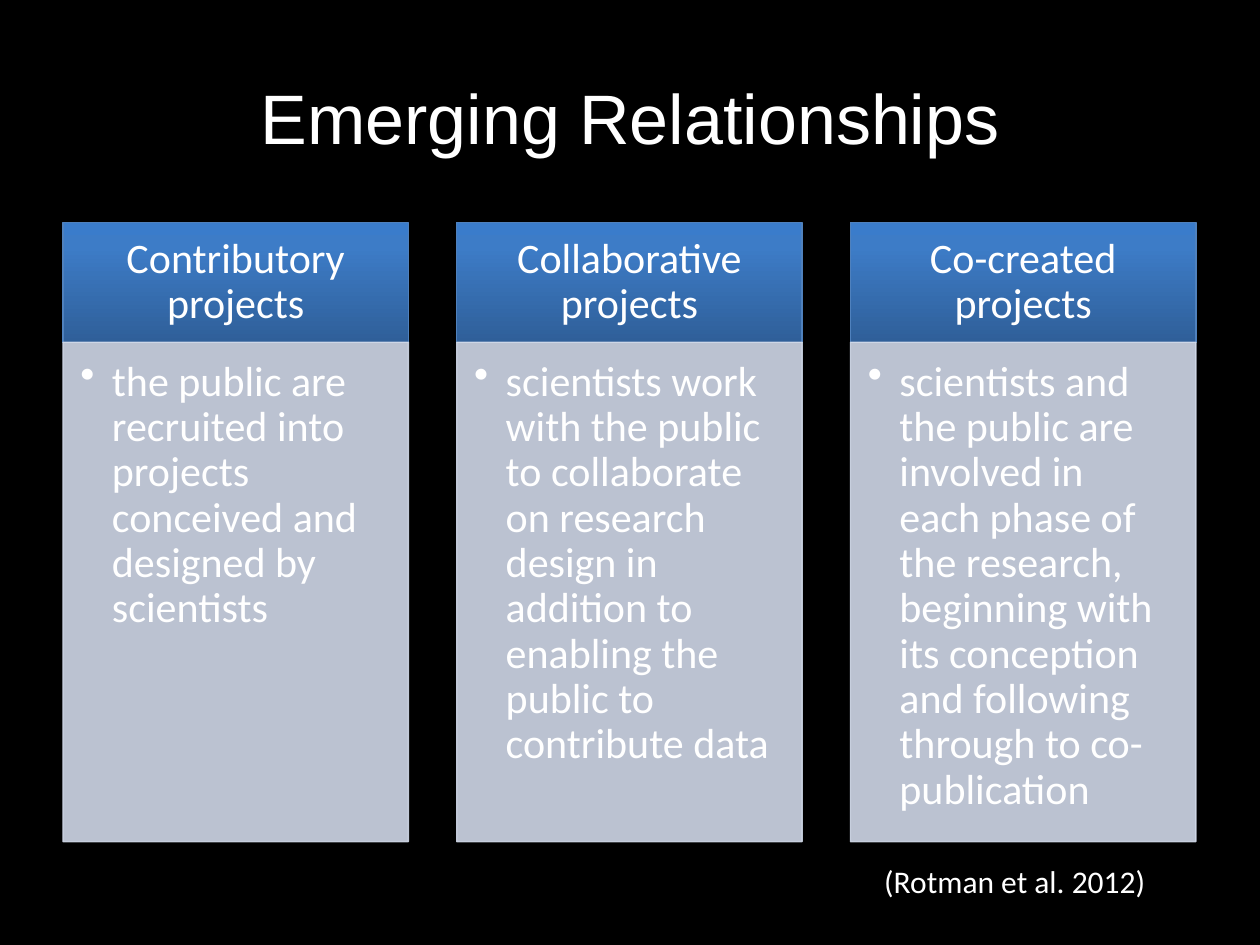
from dataclasses import dataclass

import lxml.etree
import pptx
import pptx.dml.color
import pptx.enum.shapes
import pptx.enum.text
import pptx.oxml
import pptx.oxml.ns
import pptx.shapes.autoshape
import pptx.slide
import pptx.text.text
import pptx.util

Pt = pptx.util.Pt
RGBColor = pptx.dml.color.RGBColor
Anchor = pptx.enum.text.MSO_ANCHOR
Align = pptx.enum.text.PP_ALIGN
qn = pptx.oxml.ns.qn

BLACK = RGBColor(0x00, 0x00, 0x00)
WHITE = RGBColor(0xFF, 0xFF, 0xFF)
HEADER_LINE = RGBColor(0x4F, 0x81, 0xBD)
BODY_FILL = RGBColor(0xD0, 0xD8, 0xE8)
HEADER_STOPS = (
    (0, RGBColor(0x2F, 0x5F, 0x99)),
    (80, RGBColor(0x3D, 0x7C, 0xC7)),
    (100, RGBColor(0x3A, 0x7C, 0xCB)),
)

# Column grid, in points
LEFT, TOP, WIDTH, PITCH = 36, 127.2, 197.4, 225
HEADER_HEIGHT, BODY_HEIGHT = 68.4, 285.4
BULLET_INDENT = 18


@dataclass(frozen=True)
class ProjectType:
    heading: str
    description: str


PROJECT_TYPES = (
    ProjectType("Contributory projects",
                "the public are recruited into projects conceived and "
                "designed by scientists"),
    ProjectType("Collaborative projects",
                "scientists work with the public to collaborate on research "
                "design in addition to enabling the public to contribute data"),
    ProjectType("Co-created projects",
                "scientists and the public are involved in each phase of the "
                "research, beginning with its conception and following "
                "through to co-publication"),
)


def add_span(para: pptx.text.text._Paragraph, text: str, size: float,
             font: str = "Calibri") -> None:
    span = para.add_run()
    span.text = text
    span.font.size = Pt(size)
    span.font.name = font
    span.font.color.rgb = WHITE


def set_margins(frame: pptx.text.text.TextFrame, left: float, top: float,
                right: float, bottom: float) -> None:
    frame.margin_left, frame.margin_top = Pt(left), Pt(top)
    frame.margin_right, frame.margin_bottom = Pt(right), Pt(bottom)


def add_panel(page: pptx.slide.Slide, left: float, top: float, height: float,
              line: RGBColor) -> pptx.shapes.autoshape.Shape:
    box = page.shapes.add_shape(pptx.enum.shapes.MSO_SHAPE.RECTANGLE,
                                Pt(left), Pt(top), Pt(WIDTH), Pt(height))
    box.shadow.inherit = False
    box.line.color.rgb = line
    box.line.width = Pt(0.75)
    box.text_frame.word_wrap = True
    box.text_frame.paragraphs[0].line_spacing = 0.9
    return box


def fill_gradient(box: pptx.shapes.autoshape.Shape) -> None:
    """Three-stop gradient running from the bottom edge to the top."""
    box.fill.gradient()
    gradient = box.fill._xPr.find(qn("a:gradFill"))
    for child in list(gradient):
        gradient.remove(child)
    stops = lxml.etree.SubElement(gradient, qn("a:gsLst"))
    for percent, color in HEADER_STOPS:
        stop = lxml.etree.SubElement(stops, qn("a:gs"), pos=str(percent * 1000))
        lxml.etree.SubElement(stop, qn("a:srgbClr"), val=str(color))
    lxml.etree.SubElement(gradient, qn("a:lin"), ang="16200000", scaled="0")


def make_translucent(box: pptx.shapes.autoshape.Shape, percent: int) -> None:
    for color in box._element.spPr.iter(qn("a:srgbClr")):
        lxml.etree.SubElement(color, qn("a:alpha"), val=str(percent * 1000))


def add_bullet(para: pptx.text.text._Paragraph) -> None:
    properties = para._p.get_or_add_pPr()
    properties.set("marL", str(Pt(BULLET_INDENT)))
    properties.set("indent", str(-Pt(BULLET_INDENT)))
    lxml.etree.SubElement(properties, qn("a:buChar"), char="•")


def add_column(page: pptx.slide.Slide, left: float, project: ProjectType) -> None:
    # Heading
    header = add_panel(page, left, TOP, HEADER_HEIGHT, HEADER_LINE)
    fill_gradient(header)
    header.text_frame.vertical_anchor = Anchor.MIDDLE
    set_margins(header.text_frame, 13.5, 8, 13.5, 8)
    para = header.text_frame.paragraphs[0]
    para.alignment = Align.CENTER
    add_span(para, project.heading, 24)

    # Description
    body = add_panel(page, left, TOP + HEADER_HEIGHT, BODY_HEIGHT, BODY_FILL)
    body.fill.solid()
    body.fill.fore_color.rgb = BODY_FILL
    make_translucent(body, 90)
    body.text_frame.vertical_anchor = Anchor.TOP
    set_margins(body.text_frame, 10, 10, 13.5, 15)
    para = body.text_frame.paragraphs[0]
    para.alignment = Align.LEFT
    add_bullet(para)
    add_span(para, project.description, 24)


def main() -> None:
    deck = pptx.Presentation()
    deck.slide_width, deck.slide_height = Pt(720), Pt(540)
    page = deck.slides.add_slide(deck.slide_layouts[5])
    page.background.fill.solid()
    page.background.fill.fore_color.rgb = BLACK

    # Title
    title = page.shapes.title
    title.left, title.top, title.width, title.height = (
        Pt(36), Pt(21.6), Pt(648), Pt(90))
    title.text_frame.vertical_anchor = Anchor.MIDDLE
    para = title.text_frame.paragraphs[0]
    para.alignment = Align.CENTER
    add_span(para, "Emerging Relationships", 40, "Arial")

    # Project types
    for index, project in enumerate(PROJECT_TYPES):
        add_column(page, LEFT + index * PITCH, project)

    # Citation
    citation = page.shapes.add_textbox(Pt(498.2), Pt(489), Pt(170), Pt(51))
    citation.text_frame.word_wrap = False
    add_span(citation.text_frame.paragraphs[0], "(Rotman et al. 2012)", 18)

    deck.save("out.pptx")


if __name__ == "__main__":
    main()
